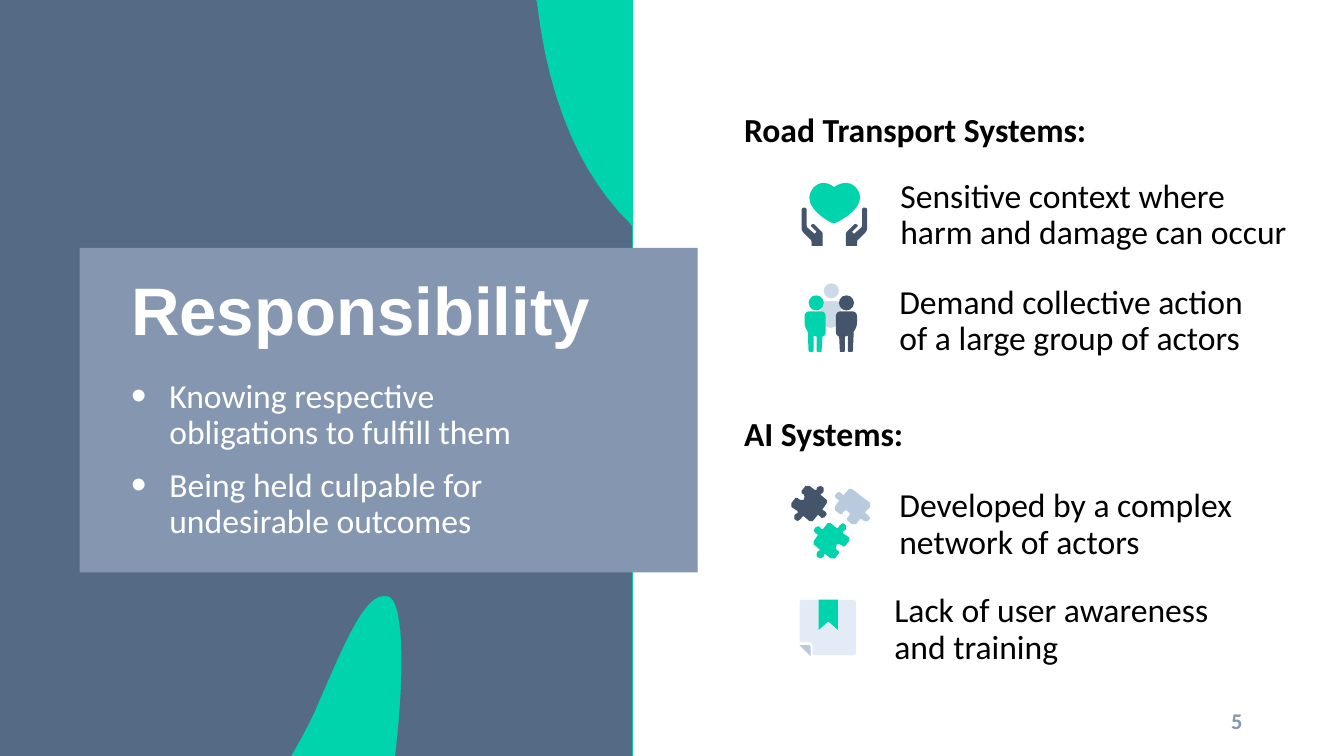
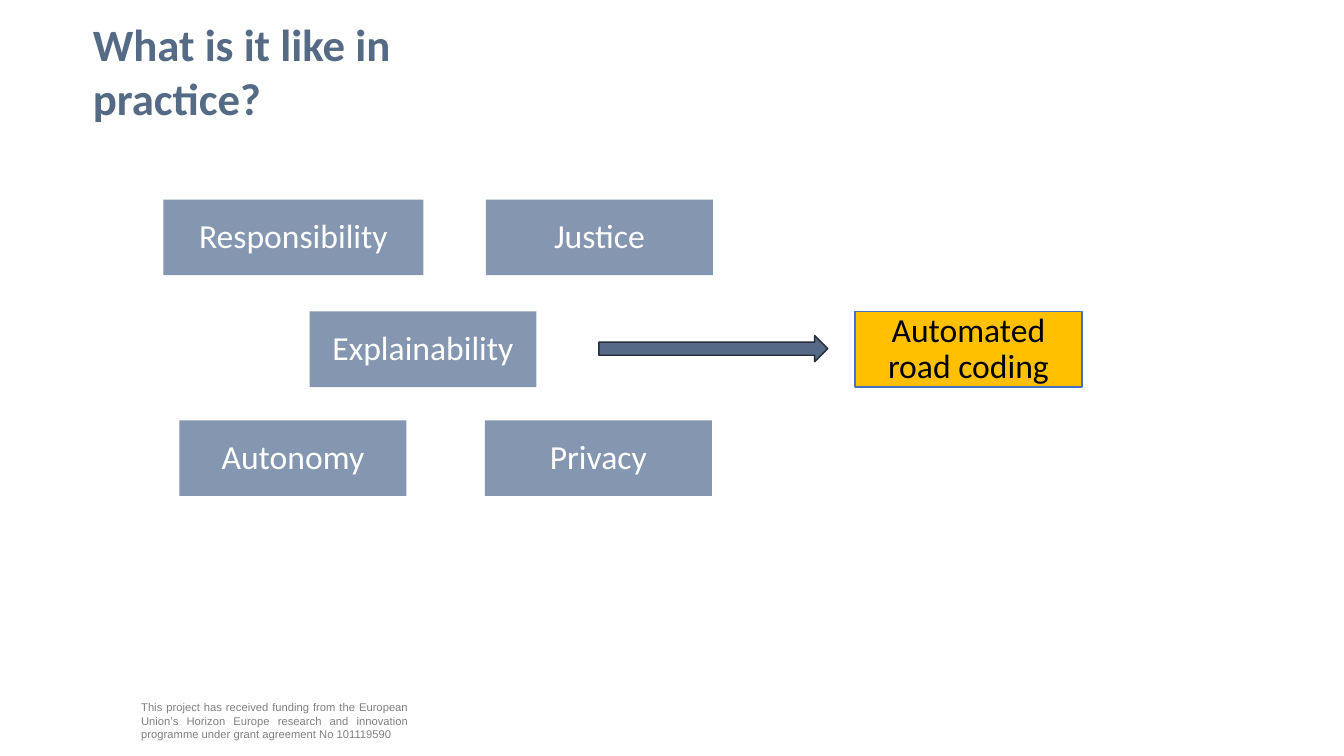
from lxml import etree
from pptx import Presentation, util as u
from pptx.dml.color import RGBColor
from pptx.enum import shapes, text
from pptx.oxml import ns

SLATE = RGBColor(0x55, 0x6A, 0x85)
STEEL = RGBColor(0x84, 0x96, 0xB0)
GREEN = RGBColor(0x00, 0xD4, 0xAD)
NAVY = RGBColor(0x44, 0x54, 0x6A)
MIST = RGBColor(0xB8, 0xCB, 0xDE)
HAZE = RGBColor(0xCC, 0xDA, 0xE8)
PAPER = RGBColor(0xE2, 0xEB, 0xF6)
AMBER = RGBColor(0xFF, 0xC0, 0x00)
BLUE = RGBColor(0x44, 0x72, 0xC4)
INK = RGBColor(0x25, 0x2E, 0x3A)
GREY = RGBColor(0x80, 0x80, 0x80)
BLACK = RGBColor(0x00, 0x00, 0x00)
WHITE = RGBColor(0xFF, 0xFF, 0xFF)

RECT = shapes.MSO_SHAPE.RECTANGLE
OVAL = shapes.MSO_SHAPE.OVAL
ARROW = shapes.MSO_SHAPE.RIGHT_ARROW
MIDDLE = text.MSO_ANCHOR.MIDDLE
ALIGN = text.PP_ALIGN

BODY = {"line_spacing": 0.9, "space_after": u.Pt(6)}
LABEL = {"line_spacing": 0.9, "space_after": u.Pt(2), "alignment": ALIGN.CENTER}

WAVE = [(0, 0), (532, 0), (533, 6), (545, 105, 578, 176, 625, 222), (627, 225),
        (627, 750), (392, 750), (394, 731), (401, 663, 400, 598, 386, 592),
        (364, 584, 345, 630, 313, 704), (309, 713, 305, 721, 300, 730),
        (289, 750), (0, 750)]
HEART = [(845, 190), (838, 182, 827, 193, 827, 193), (827, 193, 818, 182, 811, 190),
         (800, 202, 827, 216, 827, 216), (827, 216, 856, 202, 845, 190)]
HAND = [(847, 232), (854, 226), (855, 225, 855, 223, 855, 222), (855, 208),
        (855, 207, 856, 206, 857, 206), (859, 206, 860, 207, 860, 208), (860, 226),
        (860, 228, 859, 230, 858, 231), (852, 237), (850, 238, 850, 240, 850, 242),
        (850, 244), (839, 244), (839, 233), (839, 232, 839, 231, 840, 230),
        (847, 223), (848, 222, 849, 222, 850, 223), (851, 223, 851, 225, 850, 225),
        (845, 230)]
BACK_HALF = [(824, 325), (826, 325, 828, 323, 828, 321), (834, 303),
             (834, 301, 832, 299, 829, 299), (819, 299),
             (816, 299, 814, 301, 814, 303), (814, 307),
             (814, 314, 815, 325, 824, 325)]
INNER_LEG = [(837, 324), (837, 324, 838, 324, 838, 325), (838, 348),
             (838, 349, 837, 349, 837, 349), (834, 349), (833, 349, 833, 349, 833, 348),
             (832, 328), (832, 326, 834, 324, 837, 324)]
OUTER_LEG = [(846, 324), (846, 324, 847, 324, 847, 325), (846, 348),
             (846, 349, 845, 349, 844, 349), (842, 349), (842, 349, 841, 349, 841, 348),
             (841, 328), (841, 326, 843, 324, 846, 324)]
TORSO = [(836, 334), (833, 334), (831, 334, 829, 332, 829, 329), (829, 314),
         (829, 311, 831, 309, 833, 309), (846, 309), (848, 309, 850, 311, 850, 314),
         (850, 320), (850, 327, 844, 334, 836, 334)]
FULL_PIECE = [(27, 3), (26, 4), (26, 5), (24, 6), (18, 1), (15, 1), (10, 7), (9, 7),
              (8, 6), (6, 4), (3, 5), (1, 8), (2, 10), (3, 11), (5, 12), (5, 13),
              (1, 19), (1, 22), (7, 27), (7, 28), (5, 29), (4, 31), (4, 34), (7, 36),
              (10, 35), (11, 34), (11, 32), (13, 32), (18, 36), (22, 36), (26, 31),
              (26, 29), (25, 28), (24, 28), (23, 25), (24, 22), (27, 22), (29, 23),
              (30, 24), (32, 24), (36, 19), (36, 15), (30, 11), (30, 9), (32, 8),
              (33, 7), (33, 3), (30, 1)]
EDGE_PIECE = [(34, 26), (33, 25), (32, 25), (31, 23), (36, 18), (36, 14), (18, 0),
              (15, 0), (10, 6), (9, 6), (8, 5), (6, 3), (3, 4), (1, 7), (2, 9),
              (3, 10), (5, 11), (5, 12), (1, 18), (1, 21), (6, 25), (8, 25), (9, 24),
              (9, 23), (12, 21), (15, 23), (16, 25), (15, 27), (14, 28), (13, 29),
              (13, 31), (18, 35), (22, 35), (26, 30), (28, 30), (29, 31), (30, 32),
              (34, 32), (36, 29)]
PAGE = [(846, 595), (796, 595), (795, 595, 793, 596, 793, 598), (793, 637), (802, 637),
        (804, 637, 806, 639, 806, 642), (806, 650), (846, 650),
        (848, 650, 849, 649, 849, 648), (849, 598), (849, 596, 848, 595, 846, 595)]
RIBBON = [(812, 595), (812, 625), (821, 617), (822, 617), (831, 625), (831, 595)]
FOLD = [(793, 640), (804, 651), (804, 642), (804, 641, 803, 640, 802, 640)]


def moved(outline, dx=0, dy=0, sx=1, sy=1):
    """Scale an outline by sx and sy, then shift it."""
    return [tuple(sy * n + dy if i % 2 else sx * n + dx for i, n in enumerate(step))
            for step in outline]


def mirrored(outline, edges):
    """Flip an outline left to right; edges is the sum of its outer x values."""
    return moved(outline, dx=edges, sx=-1)


def flattened(outline, steps=12):
    """Turn corners (pairs) and curves (sixes), in hundredths of an inch, into points."""
    points = []
    for step in outline:
        if len(step) == 2:
            points.append(step)
            continue
        x0, y0 = points[-1]
        x1, y1, x2, y2, x3, y3 = step
        for i in range(1, steps + 1):
            t = i / steps
            a, b, c, d = (1 - t) ** 3, 3 * t * (1 - t) ** 2, 3 * t * t * (1 - t), t ** 3
            points.append((a * x0 + b * x1 + c * x2 + d * x3,
                           a * y0 + b * y1 + c * y2 + d * y3))
    return points


class Deck:
    """Holds the presentation, the current slide and the shared style."""

    def __init__(self):
        """Start an empty widescreen deck."""
        self.show = Presentation()
        self.show.slide_width, self.show.slide_height = u.Inches(13.33), u.Inches(7.5)

    def new_slide(self):
        """Add a blank slide and make it current."""
        self.slide = self.show.slides.add_slide(self.show.slide_layouts[6])

    def paint(self, shape, fill, line=None, width=1):
        """Set fill and outline and drop the shadow."""
        shape.shadow.inherit = False
        shape.fill.solid()
        shape.fill.fore_color.rgb = fill
        if line is None:
            shape.line.fill.background()
        else:
            shape.line.color.rgb = line
            shape.line.width = u.Pt(width)
        return shape

    def block(self, kind, at, fill, line=None):
        """Draw a preset shape."""
        shape = self.slide.shapes.add_shape(kind, *map(u.Inches, at))
        return self.paint(shape, fill, line)

    def outline(self, steps, fill, line=None, width=1):
        """Draw a free outline."""
        first, *rest = [tuple(u.Inches(n / 100) for n in p) for p in flattened(steps)]
        builder = self.slide.shapes.build_freeform(*first)
        builder.add_line_segments(rest, close=True)
        return self.paint(builder.convert_to_shape(), fill, line, width)

    def fill_text(self, frame, lines, color, font, paragraph, bullet=False, inset=0.0,
                  anchor=None):
        """Fill a text frame with paragraphs."""
        sides = ("margin_left", "margin_top", "margin_right", "margin_bottom")
        layout = {**dict.fromkeys(sides, u.Inches(inset)), "word_wrap": True}
        if anchor is not None:
            layout["vertical_anchor"] = anchor
        for key, value in layout.items():
            setattr(frame, key, value)
        for i, line in enumerate(lines):
            para = frame.add_paragraph() if i else frame.paragraphs[0]
            if bullet:
                self.add_bullet(para, color)
            for key, value in paragraph.items():
                setattr(para, key, value)
            if i:
                para.space_before = u.Pt(6)
            run = para.add_run()
            run.text = line
            run.font.color.rgb = color
            for key, value in {"name": "Calibri", "size": u.Pt(24), **font}.items():
                setattr(run.font, key, value)

    def add_bullet(self, para, color):
        """Give a paragraph a large round bullet and a hanging indent."""
        props = para._p.get_or_add_pPr()
        props.set("marL", str(u.Inches(0.38)))
        props.set("indent", str(-u.Inches(0.38)))
        tint = etree.SubElement(props, ns.qn("a:buClr"))
        etree.SubElement(tint, ns.qn("a:srgbClr"), val=str(color))
        etree.SubElement(props, ns.qn("a:buSzPct"), val="130000")
        etree.SubElement(props, ns.qn("a:buFont"), typeface="Arial")
        etree.SubElement(props, ns.qn("a:buChar"), char="•")

    def note(self, at, *lines, color=BLACK, font={}, paragraph=BODY, **layout):
        """Place free text."""
        box = self.slide.shapes.add_textbox(*map(u.Inches, at))
        self.fill_text(box.text_frame, lines, color, font, paragraph, **layout)

    def tag(self, at, label, fill=STEEL, color=WHITE, line=None):
        """Place a labelled rectangle."""
        shape = self.block(RECT, at, fill, line)
        self.fill_text(shape.text_frame, [label], color, {}, LABEL, inset=0.16, anchor=MIDDLE)


def draw_icons(deck):
    """Draw the four icons beside the statements."""
    deck.outline(HEART, GREEN, GREEN, 8)
    for hand in (HAND, mirrored(HAND, 1655)):
        deck.outline(hand, NAVY)

    deck.block(OVAL, (8.17, 2.81, 0.15, 0.15), HAZE)
    for half in (BACK_HALF, mirrored(BACK_HALF, 1648)):
        deck.outline(half, HAZE)
    for head_left, color, flip in ((8.02, GREEN, True), (8.32, NAVY, False)):
        deck.block(OVAL, (head_left, 2.93, 0.15, 0.15), color)
        for part in (INNER_LEG, OUTER_LEG, TORSO):
            deck.outline(mirrored(part, 1648) if flip else part, color)

    deck.outline(moved(FULL_PIECE, 806, 518), GREEN)
    deck.outline(moved(EDGE_PIECE, 827, 485), MIST)
    deck.outline(moved(FULL_PIECE, 821, 518, -1, -1), NAVY)

    for part, color in ((PAGE, PAPER), (RIBBON, GREEN), (FOLD, MIST)):
        deck.outline(part, color)


def responsibility(deck):
    """Build the slide on responsibility."""
    deck.new_slide()
    deck.block(RECT, (0, 0, 6.28, 7.5), GREEN)
    deck.outline(WAVE, SLATE)
    deck.block(RECT, (0.79, 2.46, 6.13, 3.22), STEEL)
    deck.note((1.3, 2.73, 5.78, 0.73), "Responsibility", color=WHITE,
              font={"name": "Arial", "size": u.Pt(48), "bold": True},
              paragraph={"line_spacing": u.Pt(52)}, anchor=text.MSO_ANCHOR.BOTTOM)
    deck.note((1.3, 3.76, 4.49, 1.62), "Knowing respective obligations to fulfill them",
              "Being held culpable for undesirable outcomes", color=WHITE, bullet=True)
    for top, heading in ((1.13, "Road Transport Systems:"), (4.14, "AI Systems:")):
        deck.note((7.38, top, 3.88, 0.36), heading, font={"bold": True})
    for left, top, width, statement in (
            (8.93, 1.78, 3.88, "Sensitive context where harm and damage can occur"),
            (8.92, 2.83, 3.63, "Demand collective action of a large group of actors"),
            (8.92, 4.85, 3.61, "Developed by a complex network of actors"),
            (8.87, 5.89, 3.61, "Lack of user awareness and training")):
        deck.note((left, top, width, 0.73), statement)
    draw_icons(deck)
    deck.note((9.42, 6.95, 3, 0.4), "5", color=STEEL, inset=0.1, anchor=MIDDLE,
              font={"size": u.Pt(16), "bold": True}, paragraph={"alignment": ALIGN.RIGHT})


def practice(deck):
    """Build the slide on practice."""
    deck.new_slide()
    deck.note((1.4, 6.95, 2.65, 0.4),
              "This project has received funding from the European Union’s Horizon Europe "
              "research and innovation programme under grant agreement No 101119590",
              color=GREY, font={"name": "Arial", "size": u.Pt(8)},
              paragraph={"alignment": ALIGN.JUSTIFY, "space_after": u.Pt(8)})
    for left, top, width, value in ((1.62, 1.98, 2.58, "Responsibility"),
                                    (4.82, 1.98, 2.25, "Justice"),
                                    (3.07, 3.09, 2.25, "Explainability"),
                                    (1.78, 4.17, 2.25, "Autonomy"),
                                    (4.81, 4.17, 2.25, "Privacy")):
        deck.tag((left, top, width, 0.75), value)
    deck.block(ARROW, (5.94, 3.33, 2.27, 0.26), SLATE, INK)
    deck.tag((8.48, 3.09, 2.25, 0.75), "Automated road coding", AMBER, BLACK, BLUE)
    deck.note((0.92, 0.43, 4.62, 0.54), "What is it like in practice?", color=SLATE,
              font={"size": u.Pt(32), "bold": True}, paragraph={}, anchor=MIDDLE)


def main():
    """Build and save the deck."""
    deck = Deck()
    responsibility(deck)
    practice(deck)
    deck.show.save("out.pptx")


if __name__ == "__main__":
    main()
